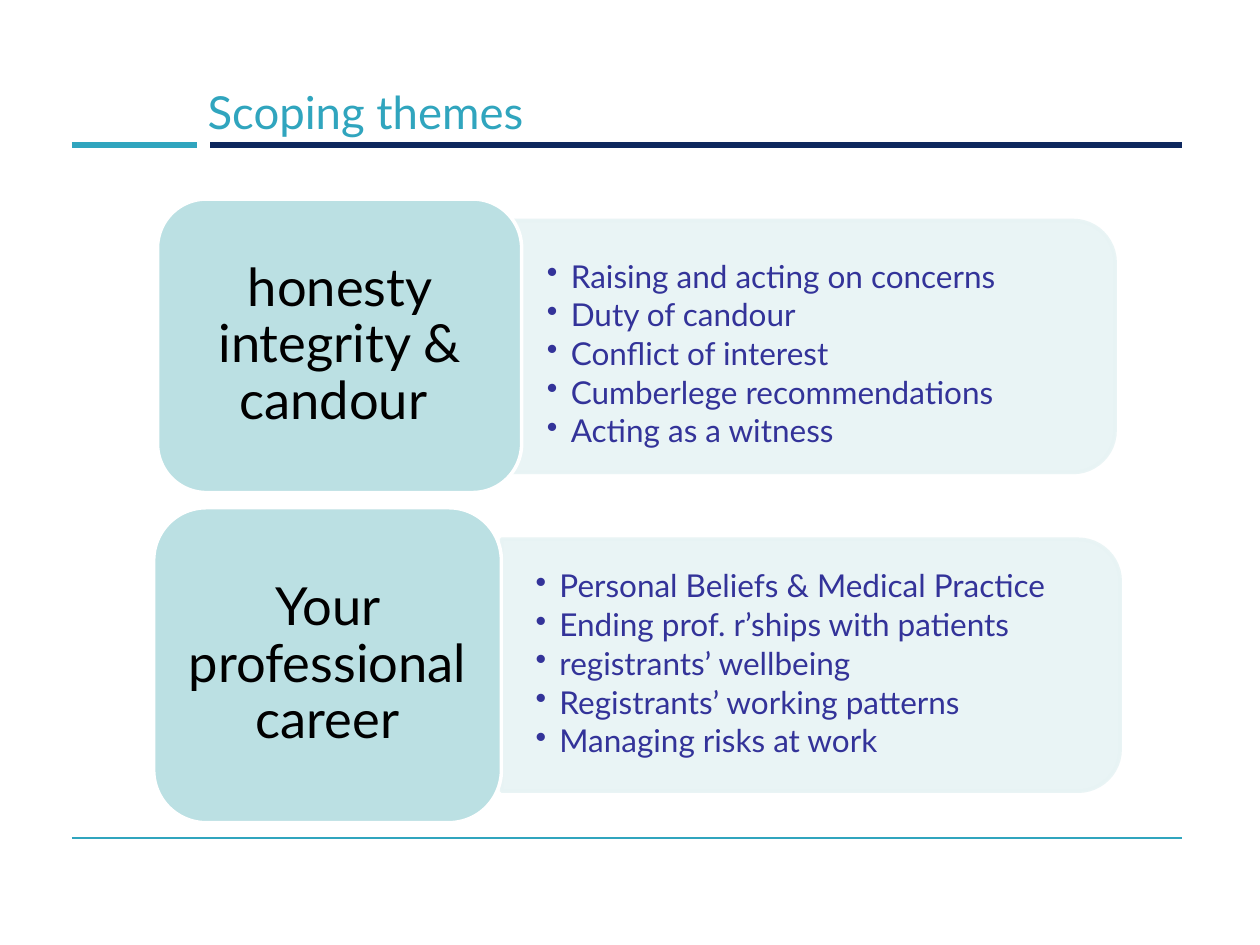
from lxml.etree import SubElement
from pptx import Presentation
from pptx.dml.color import RGBColor
from pptx.enum.shapes import MSO_CONNECTOR, MSO_SHAPE
from pptx.enum.text import MSO_ANCHOR, PP_ALIGN
from pptx.oxml.ns import qn
from pptx.util import Inches, Pt

TEAL = RGBColor(0x30, 0xA5, 0xBE)
NAVY = RGBColor(0x0E, 0x28, 0x5E)
CARD = RGBColor(0xBB, 0xE0, 0xE3)
PANEL = RGBColor(0xE7, 0xF3, 0xF4)
INDIGO = RGBColor(0x33, 0x33, 0x99)
WHITE = RGBColor(0xFF, 0xFF, 0xFF)
BLACK = RGBColor(0x00, 0x00, 0x00)
PANEL_HEIGHT = 2

RULES = [
    (1.67, 9.38, 1.15, NAVY, 3),
    (0.57, 1.56, 1.15, TEAL, 3),
    (0.57, 9.38, 6.65, TEAL, 0.75),
]
THEMES = [
    {
        "name": "honesty integrity & candour ",
        "card": (1.25, 1.58, 2.89, 2.33),
        "panel": (4.07, 1.75, 4.78),
        "list": (4.07, 1.92, 4.69, 1.8),
        "topics": [
            "Raising and acting on concerns",
            "Duty of candour",
            "Conflict of interest",
            "Cumberlege recommendations",
            "Acting as a witness",
        ],
    },
    {
        "name": "Your professional career",
        "card": (1.22, 4.03, 2.76, 2.5),
        "panel": (3.98, 4.28, 4.91),
        "list": (3.98, 4.38, 4.81, 1.8),
        "topics": [
            "Personal Beliefs & Medical Practice",
            "Ending prof. r’ships with patients",
            "registrants’ wellbeing",
            "Registrants’ working patterns",
            "Managing risks at work",
        ],
    },
]


def set_frame(shape, horizontal, vertical):
    settings = {
        "word_wrap": True,
        "vertical_anchor": MSO_ANCHOR.MIDDLE,
        "margin_left": Inches(horizontal),
        "margin_right": Inches(horizontal),
        "margin_top": Inches(vertical),
        "margin_bottom": Inches(vertical),
    }
    for name, value in settings.items():
        setattr(shape.text_frame, name, value)
    return shape.text_frame


def write(paragraph, text, size, color, **layout):
    for name, value in layout.items():
        setattr(paragraph, name, value)
    run = paragraph.add_run()
    run.text = text
    for name, value in {"name": "Lato", "size": Pt(size)}.items():
        setattr(run.font, name, value)
    run.font.color.rgb = color


presentation = Presentation()
presentation.slide_width = Inches(10)
presentation.slide_height = Inches(7.5)
slide = presentation.slides.add_slide(presentation.slide_layouts[6])

for left, right, top, color, width in RULES:
    rule = slide.shapes.add_connector(
        MSO_CONNECTOR.STRAIGHT, Inches(left), Inches(top), Inches(right), Inches(top)
    )
    rule.line.color.rgb = color
    rule.line.width = Pt(width)
    SubElement(rule._element.spPr, qn("a:effectLst"))

title = slide.shapes.add_textbox(Inches(1.55), Inches(0.52), Inches(7.83), Inches(0.73))
write(set_frame(title, 0.1, 0.05).paragraphs[0], "Scoping themes", 26, TEAL)

for theme in THEMES:
    left, top, length = theme["panel"]
    offset = (length - PANEL_HEIGHT) / 2
    panel = slide.shapes.add_shape(
        MSO_SHAPE.ROUND_2_SAME_RECTANGLE,
        Inches(left + offset), Inches(top - offset), Inches(PANEL_HEIGHT), Inches(length),
    )
    panel.rotation = 90
    card = slide.shapes.add_shape(MSO_SHAPE.ROUNDED_RECTANGLE, *map(Inches, theme["card"]))

    for shape, fill, outline in [(panel, PANEL, PANEL), (card, CARD, WHITE)]:
        shape.shadow.inherit = False
        shape.fill.solid()
        shape.fill.fore_color.rgb = fill
        shape.line.color.rgb = outline
        shape.line.width = Pt(2)
    for color in panel._element.spPr.iter(qn("a:srgbClr")):
        SubElement(color, qn("a:alpha"), val="90000")

    write(
        set_frame(card, 0.12, 0.06).paragraphs[0], theme["name"], 30, BLACK,
        alignment=PP_ALIGN.CENTER, line_spacing=0.9,
    )

    topic_box = slide.shapes.add_textbox(*map(Inches, theme["list"]))
    frame = set_frame(topic_box, 0.27, 0.14)
    for index, topic in enumerate(theme["topics"]):
        paragraph = frame.add_paragraph() if index else frame.paragraphs[0]
        properties = paragraph._p.get_or_add_pPr()
        properties.set("marL", str(Inches(0.19)))
        properties.set("indent", str(-Inches(0.19)))
        SubElement(properties, qn("a:buChar"), char="•")
        write(paragraph, topic, 18, INDIGO, line_spacing=0.9, space_after=Pt(2.7))

presentation.save("out.pptx")
